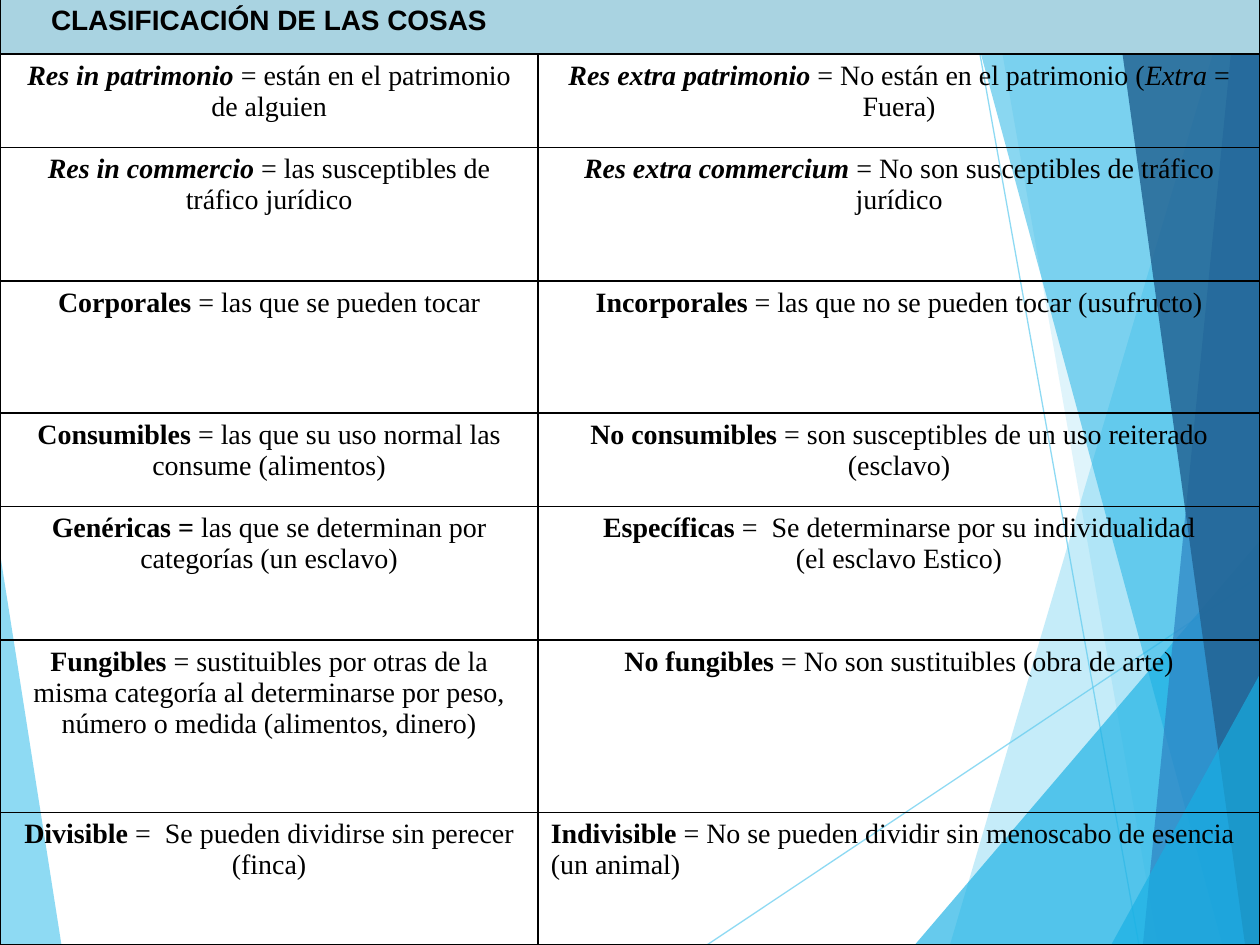
"""Build a slide that classifies things in Roman law as a two-column table."""
from lxml import etree
from pptx import Presentation
from pptx import util as u
from pptx.dml.color import RGBColor
from pptx.enum import shapes, text
from pptx.oxml.ns import qn

COLORS = {"ink": "000000", "header": "A9D3E1", "sky": "5FCBEF",
          "cyan": "17B0E4", "blue": "2E83C3", "navy": "226292"}
WIDTH, HEIGHT = 25.4, 19.05

LEFT_FACET = ("sky", 70, [(0, 11.15), (1.24, HEIGHT), (0, HEIGHT)])
RAYS = [((14.25, HEIGHT), (WIDTH, 11.61)), ((19.56, 0), (22.96, HEIGHT))]
RIGHT_FACETS = [
    ("sky", 36, 24.77, 0, 19.15),
    ("sky", 20, 20.02, 0, 23.34),
    ("cyan", 66, WIDTH, 10.9, 18.44),
    ("cyan", 50, 19.48, 0, 24.64),
    ("blue", 70, 24.92, 0, 23.04),
    ("navy", 82, 22.48, 0, 25.1),
    ("cyan", 66, WIDTH, 13.59, 22.4),
]

TITLE = "CLASIFICACIÓN DE LAS COSAS"
COLUMN_WIDTHS = [10.85, 14.55]
HEADER_HEIGHT = 1.12
PAIRS = [
    (1.88, [[("Res in patrimonio ", "bi"), ("= están en el patrimonio de alguien", "")]],
     [[("Res extra patrimonio", "bi"), (" = No están en el patrimonio (", ""),
       ("Extra", "i"), (" = Fuera)", "")]]),
    (2.69, [[("Res in commercio", "bi"), (" = las susceptibles de tráfico jurídico", "")]],
     [[("Res extra commercium", "bi"), (" = No son susceptibles de tráfico jurídico", "")]]),
    (2.67, [[("Corporales", "b"), (" = las que se pueden tocar", "")]],
     [[("Incorporales", "b"), (" = las que no se pueden tocar (usufructo)", "")]]),
    (1.88, [[("Consumibles", "b"), (" = las que su uso normal las consume (alimentos)", "")]],
     [[("No consumibles", "b"), (" = son susceptibles de un uso reiterado (esclavo)", "")]]),
    (2.69, [[("Genéricas =", "b"), (" las que se determinan por categorías (un esclavo)", "")]],
     [[("Específicas", "b"), (" =  Se determinarse por su individualidad", "")],
      [("(el esclavo Estico)", "")]]),
    (3.48, [[("Fungibles", "b"), (" = sustituibles por otras de la misma categoría al "
                                  "determinarse por peso, número o medida (alimentos, dinero)", "")]],
     [[("No fungibles", "b"), (" = No son sustituibles (obra de arte)", "")]]),
    (2.69, [[("Divisible", "b"), (" =  Se pueden dividirse sin perecer (finca)", "")]],
     [[("Indivisible", "b"), (" = No se pueden dividir sin menoscabo de esencia (un animal)", "")]]),
]


def rgb(name):
    return RGBColor.from_string(COLORS[name])


def set_alpha(fill_parent, percent):
    color = next(fill_parent.iter(qn("a:srgbClr")))
    etree.SubElement(color, qn("a:alpha")).set("val", str(percent * 1000))


def add_facet(slide, color, alpha, corners):
    points = [(u.Cm(x), u.Cm(y)) for x, y in corners]
    builder = slide.shapes.build_freeform(*points[0], scale=1.0)
    builder.add_line_segments(points[1:], close=True)
    facet = builder.convert_to_shape()
    facet.shadow.inherit = False
    facet.fill.solid()
    facet.fill.fore_color.rgb = rgb(color)
    set_alpha(facet.fill._xPr, alpha)
    facet.line.fill.background()


def add_ray(slide, start, end):
    ray = slide.shapes.add_connector(
        shapes.MSO_CONNECTOR.STRAIGHT, *(u.Cm(v) for v in start + end))
    ray.line.width = u.Pt(0.75)
    ray.line.color.rgb = rgb("sky")
    properties = ray._element.spPr
    set_alpha(properties, 70)
    etree.SubElement(properties, qn("a:effectLst"))


def write(frame, paragraphs, font="Times New Roman", size=16, align=text.PP_ALIGN.CENTER):
    for index, runs in enumerate(paragraphs):
        paragraph = frame.add_paragraph() if index else frame.paragraphs[0]
        paragraph.alignment = align
        for words, style in runs:
            run = paragraph.add_run()
            run.text = words
            run.font.name, run.font.size = font, u.Pt(size)
            run.font.bold, run.font.italic = "b" in style, "i" in style
            run.font.color.rgb = rgb("ink")


def set_borders(cell, hidden="", bottom=1):
    properties = cell._tc.get_or_add_tcPr()
    for side in "LRTB":
        width = bottom if side == "B" else 1
        edge = etree.SubElement(properties, qn(f"a:ln{side}"), w=str(u.Pt(width)))
        if side == hidden:
            etree.SubElement(edge, qn("a:noFill"))
        else:
            ink = etree.SubElement(edge, qn("a:solidFill"))
            etree.SubElement(ink, qn("a:srgbClr"), val=COLORS["ink"])


def add_classification(slide):
    heights = [HEADER_HEIGHT] + [pair[0] for pair in PAIRS]
    table = slide.shapes.add_table(
        len(heights), 2, u.Cm(0), u.Cm(-0.03), u.Cm(WIDTH), u.Cm(sum(heights))).table
    table.first_row = table.horz_banding = False
    for column, width in zip(table.columns, COLUMN_WIDTHS):
        column.width = u.Cm(width)
    for row, height in zip(table.rows, heights):
        row.height = u.Cm(height)

    for column, inner_side in enumerate("RL"):
        header = table.cell(0, column)
        set_borders(header, hidden=inner_side)
        header.fill.solid()
        header.fill.fore_color.rgb = rgb("header")
    write(table.cell(0, 0).text_frame, [[(TITLE, "b")]], font="Arial")

    for row, (_, *definitions) in enumerate(PAIRS, start=1):
        is_last = row == len(PAIRS)
        for column, definition in enumerate(definitions):
            cell = table.cell(row, column)
            set_borders(cell, bottom=2 if is_last else 1)
            cell.fill.background()
            align = text.PP_ALIGN.LEFT if is_last and column else text.PP_ALIGN.CENTER
            write(cell.text_frame, definition, align=align)


def main():
    deck = Presentation()
    deck.slide_width, deck.slide_height = u.Cm(WIDTH), u.Cm(HEIGHT)
    slide = deck.slides.add_slide(deck.slide_layouts[6])
    add_facet(slide, *LEFT_FACET)
    for start, end in RAYS:
        add_ray(slide, start, end)
    for color, alpha, top_x, top_y, bottom_x in RIGHT_FACETS:
        corners = [(top_x, top_y), (bottom_x, HEIGHT), (WIDTH, HEIGHT)]
        if top_x < WIDTH:
            corners.append((WIDTH, top_y))
        add_facet(slide, color, alpha, corners)
    add_classification(slide)
    deck.save("out.pptx")


if __name__ == "__main__":
    main()
